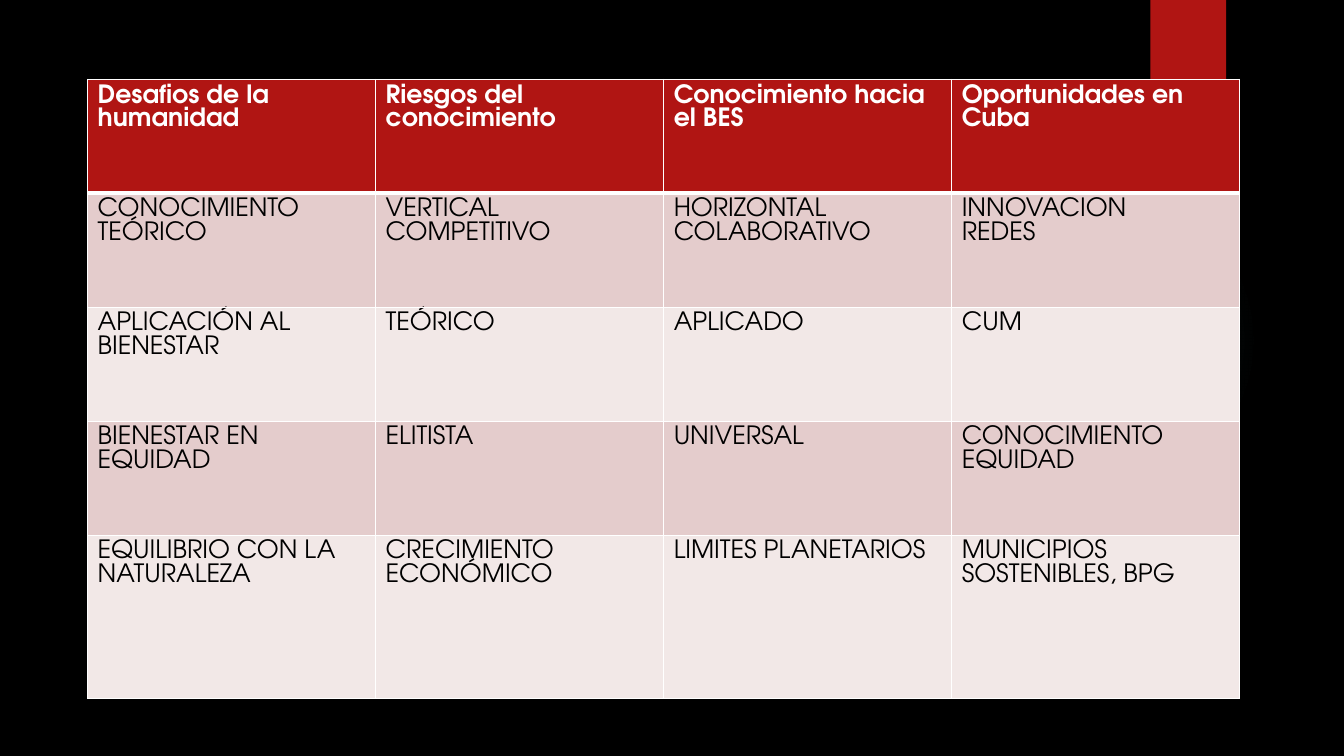
from lxml.etree import SubElement
from pptx import Presentation
from pptx.dml.color import RGBColor
from pptx.enum.shapes import MSO_SHAPE
from pptx.oxml import parse_xml
from pptx.oxml.ns import nsdecls, qn
from pptx.util import Pt

BLACK = RGBColor(0x00, 0x00, 0x00)
WHITE = RGBColor(0xFF, 0xFF, 0xFF)
RED = RGBColor(0xB0, 0x15, 0x13)
ROSE = RGBColor(0xE4, 0xCC, 0xCC)
PALE_ROSE = RGBColor(0xF2, 0xE8, 0xE7)
TEAL = RGBColor(0x50, 0xB9, 0xC1)

FONT = "TeX Gyre Adventor"
HEADER_FORMAT = {"name": FONT, "size": Pt(18), "bold": True}
BODY_FORMAT = {"name": FONT, "size": Pt(18), "bold": False}
GLOW_STOPS = [(0, 7), (36, 6), (69, 0)]  # position and opacity, in percent

ROW_HEIGHTS = [81.4] * 4 + [116.6]
ROWS = [
    ["Desafios de la humanidad", "Riesgos del conocimiento",
     "Conocimiento hacia el BES", "Oportunidades en Cuba"],
    ["CONOCIMIENTO TEÓRICO", "VERTICAL\nCOMPETITIVO",
     "HORIZONTAL\nCOLABORATIVO", "INNOVACION\nREDES"],
    ["APLICACIÓN AL BIENESTAR", "TEÓRICO", "APLICADO", "CUM"],
    ["BIENESTAR EN EQUIDAD", "ELITISTA", "UNIVERSAL", "CONOCIMIENTO\nEQUIDAD"],
    ["EQUILIBRIO CON LA NATURALEZA", "CRECIMIENTO ECONÓMICO",
     "LIMITES PLANETARIOS", "MUNICIPIOS SOSTENIBLES, BPG"],
]


def add_plain_shape(slide, kind, left, top, width, height):
    shape = slide.shapes.add_shape(kind, Pt(left), Pt(top), Pt(width), Pt(height))
    shape.shadow.inherit = False
    shape.line.fill.background()
    return shape


def add_glow(slide, left, top, size):
    """Faint round glow that fades outwards from its centre."""
    shape = add_plain_shape(slide, MSO_SHAPE.OVAL, left, top, size, size)
    stops = "".join(
        f'<a:gs pos="{position * 1000}"><a:srgbClr val="{TEAL}">'
        f'<a:alpha val="{opacity * 1000}"/></a:srgbClr></a:gs>'
        for position, opacity in GLOW_STOPS)
    gradient = parse_xml(
        f'<a:gradFill {nsdecls("a")}><a:gsLst>{stops}</a:gsLst><a:path path="circle">'
        '<a:fillToRect l="50000" t="50000" r="50000" b="50000"/></a:path></a:gradFill>')
    shape.element.spPr.find(qn("a:prstGeom")).addnext(gradient)


def add_tab(slide, left, top, width, height):
    """Red tab hanging from the top edge."""
    shape = add_plain_shape(slide, MSO_SHAPE.RECTANGLE, left, top, width, height)
    shape.fill.solid()
    shape.fill.fore_color.rgb = RED


def set_borders(cell, widths):
    properties = cell._tc.get_or_add_tcPr()
    for side, width in widths.items():
        line = SubElement(properties, qn(f"a:ln{side}"), w=str(Pt(width)))
        fill = SubElement(line, qn("a:solidFill"))
        SubElement(fill, qn("a:srgbClr"), val=str(WHITE))


def fill_cell(cell, text, row_index):
    is_header = row_index == 0
    # The rule below the header is thicker than the others
    set_borders(cell, {"L": 1, "R": 1, "T": 3 if row_index == 1 else 1,
                       "B": 3 if is_header else 1})
    cell.fill.solid()
    cell.fill.fore_color.rgb = RED if is_header else (PALE_ROSE, ROSE)[row_index % 2]
    cell.text = text
    for paragraph in cell.text_frame.paragraphs:
        font = paragraph.runs[0].font
        for name, value in (HEADER_FORMAT if is_header else BODY_FORMAT).items():
            setattr(font, name, value)
        font.color.rgb = WHITE if is_header else BLACK


def add_challenges_table(slide, left, top, width):
    """Table of challenges, risks and opportunities."""
    column_count = len(ROWS[0])
    table = slide.shapes.add_table(
        len(ROWS), column_count, Pt(left), Pt(top), Pt(width), Pt(sum(ROW_HEIGHTS))).table
    for column in table.columns:
        column.width = Pt(width / column_count)
    for row_index, (texts, height) in enumerate(zip(ROWS, ROW_HEIGHTS)):
        table.rows[row_index].height = Pt(height)
        for column_index, text in enumerate(texts):
            fill_cell(table.cell(row_index, column_index), text, row_index)


def main():
    presentation = Presentation()
    presentation.slide_width, presentation.slide_height = Pt(960), Pt(540)
    slide = presentation.slides.add_slide(presentation.slide_layouts[6])
    slide.background.fill.solid()
    slide.background.fill.fore_color.rgb = BLACK

    add_glow(slide, 677.5, 131.8, 221.8)
    add_tab(slide, 821.8, 0, 54, 90)
    add_challenges_table(slide, 62.6, 56.7, 823)
    presentation.save("out.pptx")


if __name__ == "__main__":
    main()
